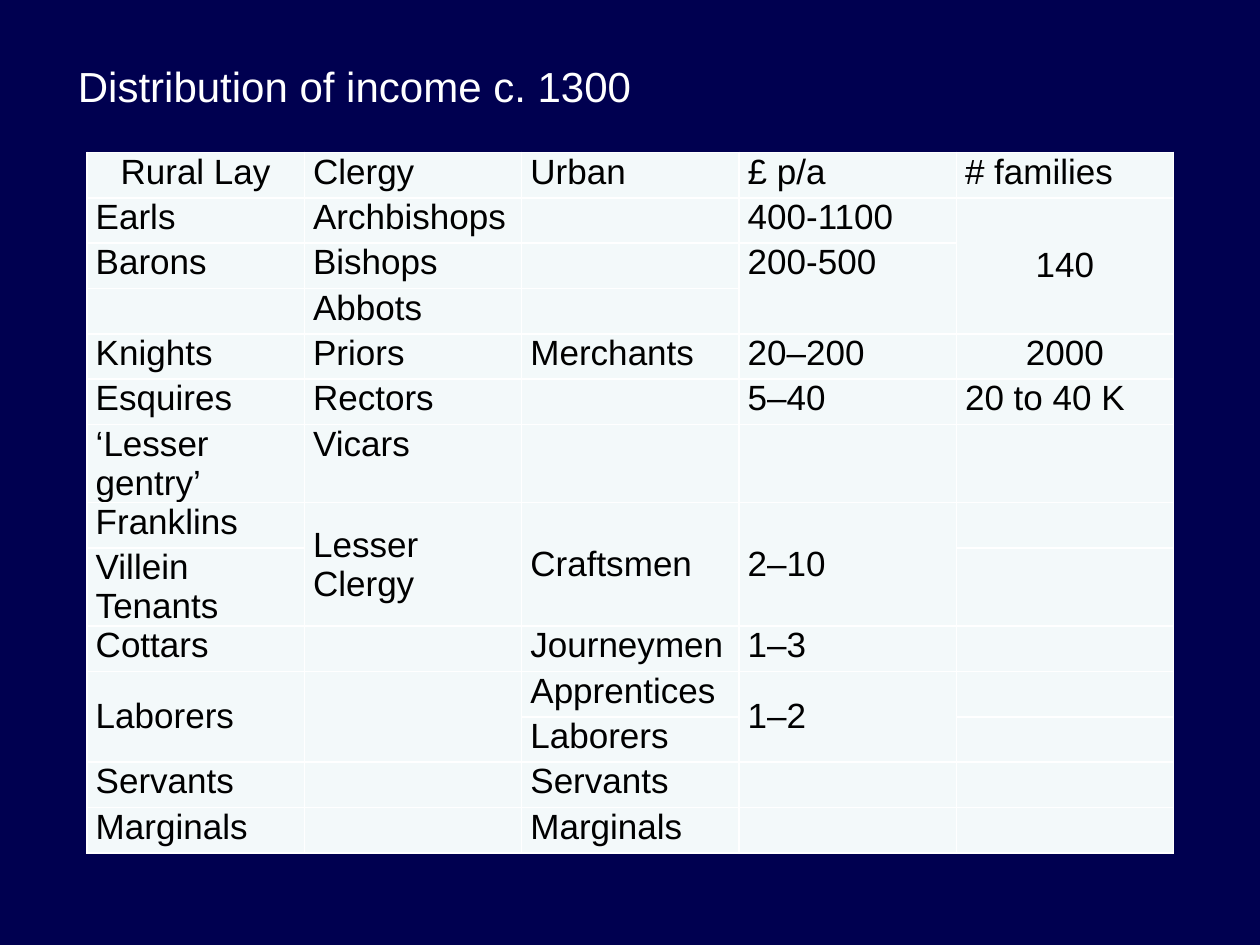
from dataclasses import dataclass

from lxml.etree import SubElement as Sub
from pptx import Presentation
from pptx.dml.color import RGBColor as RGB
from pptx.enum.text import MSO_ANCHOR as Anchor, PP_ALIGN as Align
from pptx.oxml.ns import qn
from pptx.slide import Slide
from pptx.table import Table, _Cell as Cell
from pptx.text.text import _Paragraph as Para
from pptx.util import Inches, Pt


@dataclass(frozen=True)
class Theme:
    back: str = "000050"
    cell: str = "F3F9FA"
    rule: str = "FFFFFF"
    light: str = "FFFFFF"
    dark: str = "000000"
    face: str = "Arial"
    head: int = 24
    body: int = 20


@dataclass(frozen=True)
class Entry:
    row: int
    col: int
    text: str
    span: int


THEME = Theme()
UP = "^"  # continues the cell above
ROWS = [
    ("Rural Lay", "Clergy", "Urban", "£ p/a", "# families"),
    ("Earls", "Archbishops", "", "400-1100", "140"),
    ("Barons", "Bishops", "", "200-500", UP),
    ("", "Abbots", "", UP, UP),
    ("Knights", "Priors", "Merchants", "20–200", "2000"),
    ("Esquires", "Rectors", "", "5–40", "20 to 40 K"),
    ("‘Lesser gentry’", "Vicars", "", "", ""),
    ("Franklins", "Lesser Clergy", "Craftsmen", "2–10", ""),
    ("Villein Tenants", UP, UP, UP, ""),
    ("Cottars", "", "Journeymen", "1–3", ""),
    ("Laborers", "", "Apprentices", "1–2", ""),
    (UP, UP, "Laborers", UP, ""),
    ("Servants", "", "Servants", "", ""),
    ("Marginals", "", "Marginals", "", ""),
]
CENTRED = {"Rural Lay", "140", "2000"}
TOP = {"200-500"}
WIDE, HIGH = Inches(1.725), Inches(0.36)
PLAIN = {"first_row": False, "horz_banding": False}
INSET = {
    "margin_left": Inches(0.07),
    "margin_right": Inches(0.07),
    "margin_top": 0,
    "margin_bottom": 0,
}


def apply(item: object, form: dict) -> None:
    for name, value in form.items():
        setattr(item, name, value)


def write(para: Para, text: str, size: int, color: str) -> None:
    run = para.add_run()
    run.text = text
    apply(run.font, {"name": THEME.face, "size": Pt(size)})
    run.font.color.rgb = RGB.from_string(color)


def entries() -> list[Entry]:
    """Pair each cell with the number of rows it covers."""
    found = []
    for row, line in enumerate(ROWS):
        for col, text in enumerate(line):
            if text == UP:
                continue
            end = row + 1
            while end < len(ROWS) and ROWS[end][col] == UP:
                end += 1
            found.append(Entry(row, col, text, end - row))
    return found


def dress(cell: Cell) -> None:
    """Give a cell its insets, rules and fill."""
    apply(cell, INSET)
    props = cell._tc.get_or_add_tcPr()
    for side in "LRTB":
        line = Sub(props, qn(f"a:ln{side}"), w=str(Pt(1)))
        Sub(Sub(line, qn("a:solidFill")), qn("a:srgbClr"), val=THEME.rule)
    cell.fill.solid()
    cell.fill.fore_color.rgb = RGB.from_string(THEME.cell)


def enter(table: Table, entry: Entry) -> None:
    cell = table.cell(entry.row, entry.col)
    if entry.span > 1:
        cell.merge(table.cell(entry.row + entry.span - 1, entry.col))
        if entry.text not in TOP:
            cell.vertical_anchor = Anchor.MIDDLE
    if entry.text:
        para = cell.text_frame.paragraphs[0]
        side = Align.CENTER if entry.text in CENTRED else Align.LEFT
        apply(para, {"alignment": side, "space_after": Pt(5)})
        write(para, entry.text, THEME.body, THEME.dark)


def add_grid(slide: Slide) -> None:
    rows, cols = len(ROWS), len(ROWS[0])
    table = slide.shapes.add_table(
        rows, cols, Inches(0.69), Inches(1.21), WIDE * cols, HIGH * rows
    ).table
    apply(table, PLAIN)
    for row in table.rows:
        row.height = HIGH
    for cell in table.iter_cells():
        dress(cell)
    for entry in entries():
        enter(table, entry)


def add_title(slide: Slide, text: str) -> None:
    box = slide.shapes.add_textbox(
        Inches(0.52), Inches(0.43), Inches(8.5), Inches(0.5)
    )
    frame = box.text_frame
    frame.word_wrap = True
    write(frame.paragraphs[0], text, THEME.head, THEME.light)


def main() -> None:
    deck = Presentation()
    apply(deck, {"slide_width": Inches(10), "slide_height": Inches(7.5)})
    slide = deck.slides.add_slide(deck.slide_layouts[6])
    fill = slide.background.fill
    fill.solid()
    fill.fore_color.rgb = RGB.from_string(THEME.back)
    add_grid(slide)
    add_title(slide, "Distribution of income c. 1300")
    deck.save("out.pptx")


if __name__ == "__main__":
    main()
